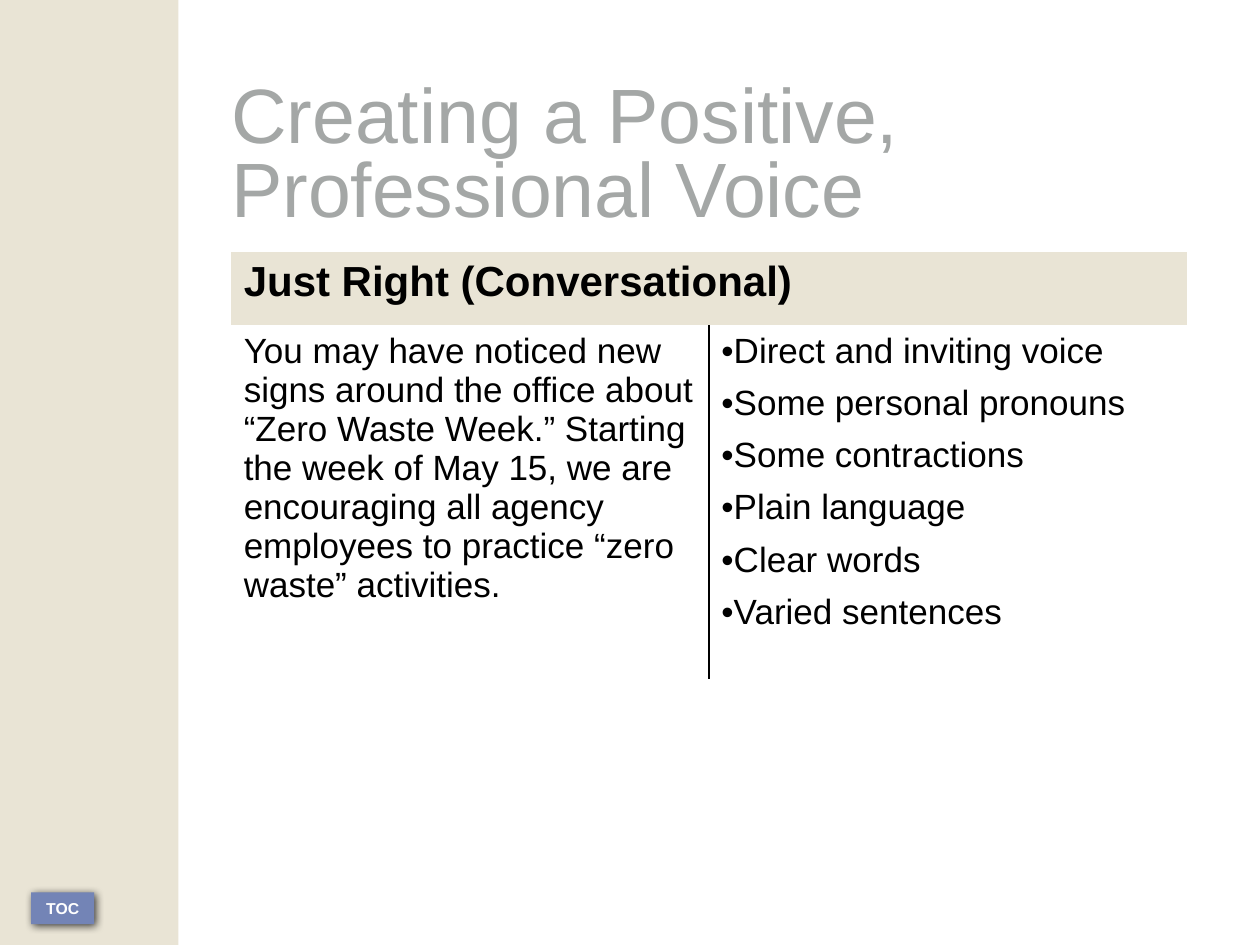
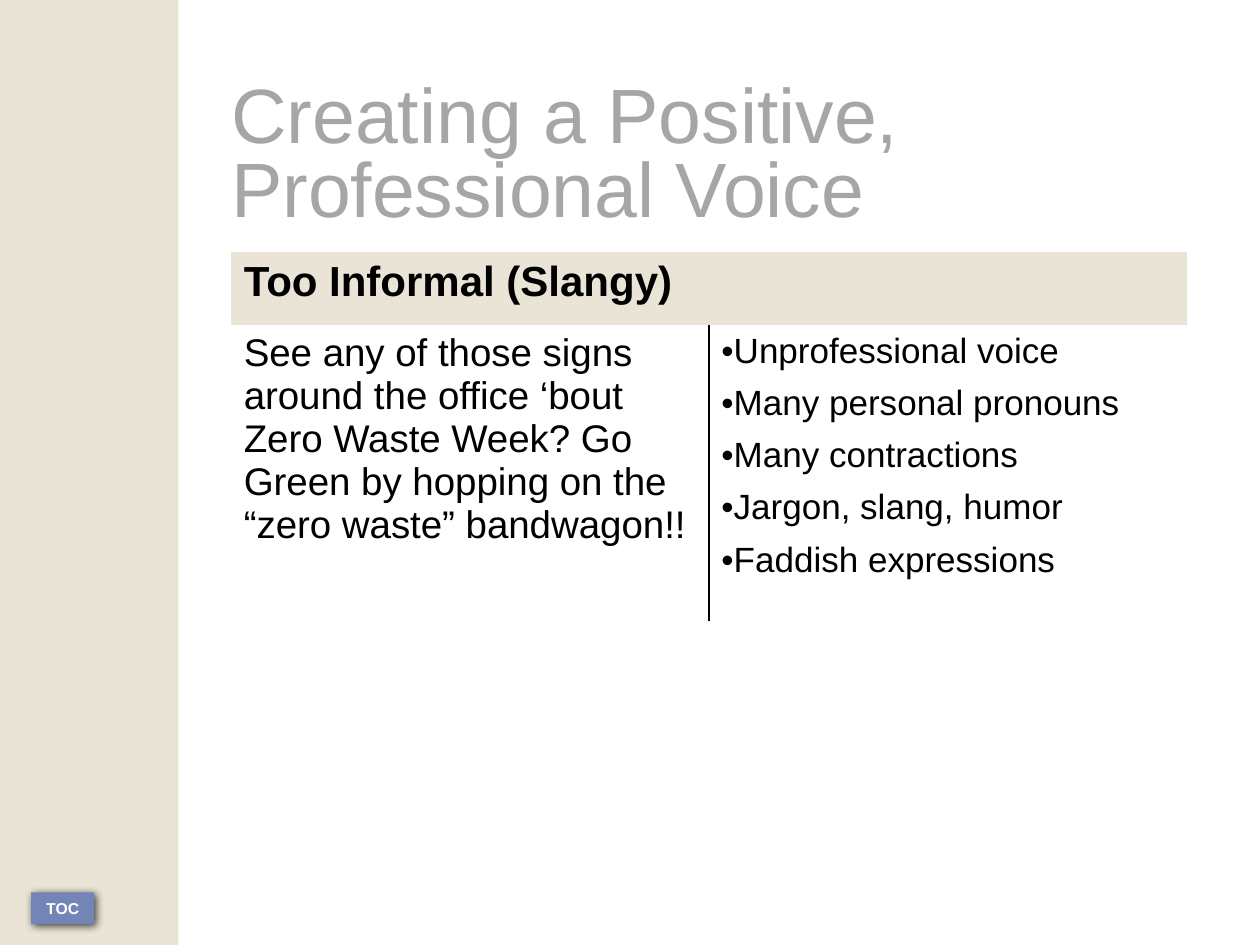
from dataclasses import dataclass

from lxml.etree import SubElement
from pptx import Presentation
from pptx.dml.color import RGBColor
from pptx.enum.shapes import MSO_SHAPE as Preset
from pptx.enum.text import MSO_ANCHOR as Anchor, PP_ALIGN as Align
from pptx.oxml import parse_xml
from pptx.oxml.ns import nsdecls, qn
from pptx.util import Cm, Pt

PLAIN_TABLE_STYLE = "{2D5ABB26-0587-4C30-8999-92F81FD0307C}"


@dataclass(frozen=True)
class Theme:
    font: str = "Arial"
    sand: str = "E9E4D5"
    button: str = "7384B6"
    title: str = "A4A7A6"
    ink: str = "000000"
    paper: str = "FFFFFF"
    title_size: float = 44
    heading_size: float = 24
    body_size: float = 20
    large_body_size: float = 22
    button_size: float = 9
    sample_gap: float = 3
    item_gap: float = 7.5
    page_width: float = 25.4
    page_height: float = 19.05
    band_width: float = 3.6
    content_left: float = 4.66
    content_width: float = 19.26


class VoiceDeck:
    def __init__(self, theme):
        self.theme = theme
        self.deck = Presentation()
        self.deck.slide_width = Cm(theme.page_width)
        self.deck.slide_height = Cm(theme.page_height)
        self.page = None

    def start_page(self):
        self.page = self.deck.slides.add_slide(self.deck.slide_layouts[6])
        self.band()
        self.toc_button()

    def style(self, para, size, color, bold=False, gap=0):
        para.space_before = Pt(gap)
        for span in para.runs:
            span.font.name = self.theme.font
            span.font.size = Pt(size)
            span.font.bold = bold
            span.font.color.rgb = RGBColor.from_string(color)

    def rectangle(self, left, top, width, height, color):
        box = self.page.shapes.add_shape(
            Preset.RECTANGLE, Cm(left), Cm(top), Cm(width), Cm(height))
        box.shadow.inherit = False
        box.fill.solid()
        box.fill.fore_color.rgb = RGBColor.from_string(color)
        box.line.fill.background()
        return box

    def band(self):
        theme = self.theme
        self.rectangle(0, 0, theme.band_width, theme.page_height, theme.sand)

    def toc_button(self):
        theme = self.theme
        box = self.rectangle(0.63, 17.99, 1.27, 0.64, theme.button)
        effects = box._element.spPr.find(qn("a:effectLst"))
        effects.append(parse_xml(
            f'<a:outerShdw {nsdecls("a")} blurRad="{Pt(5)}" dist="{Pt(1.4)}" '
            f'dir="2700000" rotWithShape="0"><a:srgbClr val="{theme.ink}">'
            '<a:alpha val="75000"/></a:srgbClr></a:outerShdw>'))
        frame = box.text_frame
        frame.text = "TOC"
        frame.vertical_anchor = Anchor.MIDDLE
        frame.paragraphs[0].alignment = Align.CENTER
        self.style(frame.paragraphs[0], theme.button_size, theme.paper, bold=True)

    def title(self, text):
        theme = self.theme
        box = self.page.shapes.add_textbox(
            Cm(theme.content_left), Cm(1.7), Cm(theme.content_width), Cm(3.18))
        frame = box.text_frame
        frame.word_wrap = True
        frame.margin_left = frame.margin_right = 0
        frame.margin_top = frame.margin_bottom = 0
        frame.vertical_anchor = Anchor.TOP
        frame.text = text
        frame.paragraphs[0].line_spacing = 0.8
        self.style(frame.paragraphs[0], theme.title_size, theme.title)

    def border(self, cell, side):
        line = parse_xml(
            f'<a:{side} {nsdecls("a")} w="{Pt(1)}"><a:solidFill>'
            f'<a:srgbClr val="{self.theme.ink}"/></a:solidFill></a:{side}>')
        cell._tc.get_or_add_tcPr().insert(0, line)

    def bullet(self, para):
        properties = para._p.get_or_add_pPr()
        properties.set("marL", "0")
        properties.set("indent", "0")
        color = SubElement(properties, qn("a:buClr"))
        SubElement(color, qn("a:srgbClr")).set("val", self.theme.ink)
        SubElement(properties, qn("a:buFont")).set("typeface", self.theme.font)
        SubElement(properties, qn("a:buChar")).set("char", "•")

    def voice_table(self, heading, sample, sample_size, traits, body_height):
        theme = self.theme
        heading_height = 1.48
        table = self.page.shapes.add_table(
            2, 2, Cm(theme.content_left), Cm(5.08), Cm(theme.content_width),
            Cm(heading_height + body_height)).table
        table.first_row = table.horz_banding = False
        table._tbl.tblPr.find(qn("a:tableStyleId")).text = PLAIN_TABLE_STYLE
        for row, height in zip(table.rows, (heading_height, body_height)):
            row.height = Cm(height)

        heading_cell = table.cell(0, 0)
        heading_cell.merge(table.cell(0, 1))
        sample_cell, traits_cell = table.cell(1, 0), table.cell(1, 1)
        heading_cell.fill.solid()
        heading_cell.fill.fore_color.rgb = RGBColor.from_string(theme.sand)
        for cell, side in ((sample_cell, "lnR"), (traits_cell, "lnL")):
            cell.fill.background()
            self.border(cell, side)

        heading_cell.text_frame.text = heading
        self.style(heading_cell.text_frame.paragraphs[0], theme.heading_size,
                   theme.ink, bold=True, gap=theme.item_gap)
        sample_cell.text_frame.text = sample
        self.style(sample_cell.text_frame.paragraphs[0], sample_size,
                   theme.ink, gap=theme.sample_gap)
        traits_cell.text_frame.text = "\n".join(traits)
        for para in traits_cell.text_frame.paragraphs:
            self.style(para, theme.body_size, theme.ink, gap=theme.item_gap)
            self.bullet(para)


def main():
    theme = Theme()
    voices = [
        ("Just Right (Conversational)",
         "You may have noticed new signs around the office about “Zero Waste "
         "Week.” Starting the week of May 15, we are encouraging all agency "
         "employees to practice “zero waste” activities.",
         theme.body_size,
         ["Direct and inviting voice", "Some personal pronouns",
          "Some contractions", "Plain language", "Clear words",
          "Varied sentences"],
         7.13),
        ("Too Informal (Slangy)",
         "See any of those signs around the office ‘bout Zero Waste Week? Go "
         "Green by hopping on the “zero waste” bandwagon!!",
         theme.large_body_size,
         ["Unprofessional voice", "Many personal pronouns",
          "Many contractions", "Jargon, slang, humor", "Faddish expressions"],
         5.95),
    ]
    builder = VoiceDeck(theme)
    for voice in voices:
        builder.start_page()
        builder.title("Creating a Positive, Professional Voice")
        builder.voice_table(*voice)
    builder.deck.save("out.pptx")


if __name__ == "__main__":
    main()
